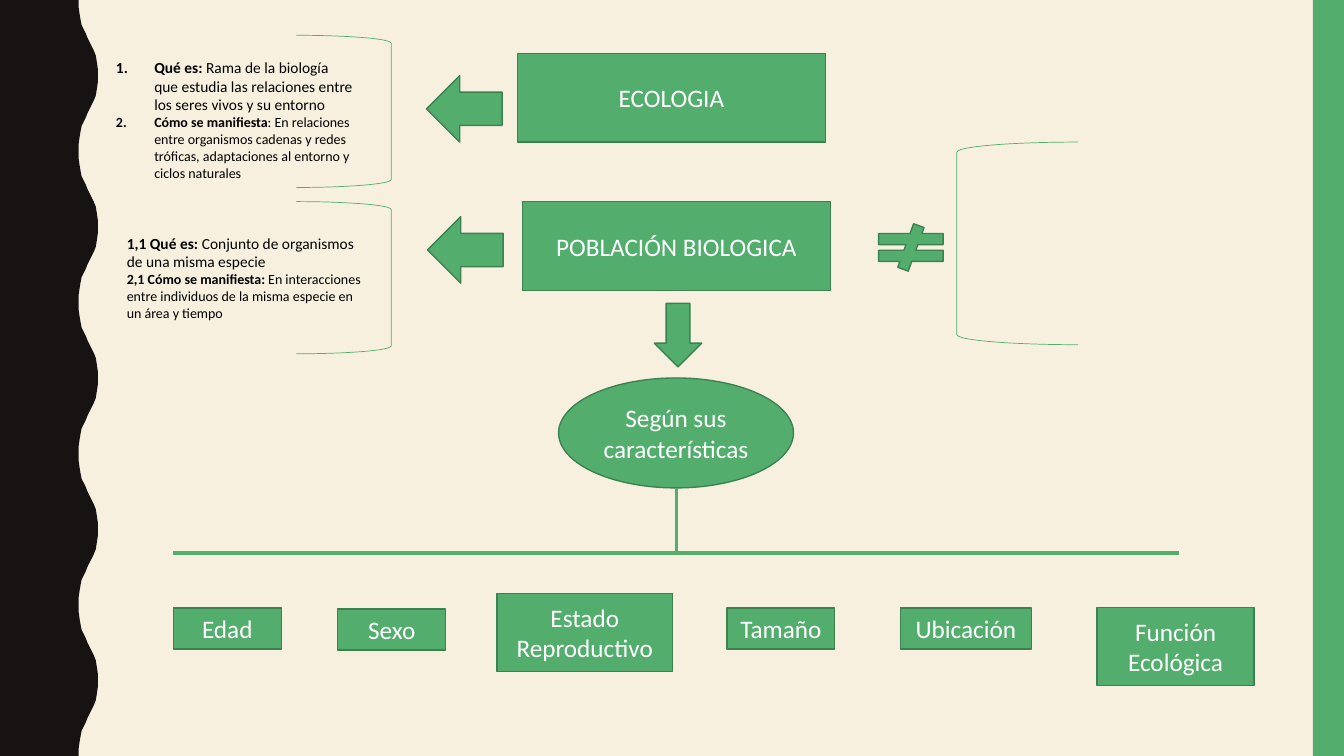
from lxml import etree
from pptx import Presentation
from pptx.dml.color import RGBColor
from pptx.enum.shapes import MSO_CONNECTOR, MSO_SHAPE
from pptx.enum.text import MSO_ANCHOR, MSO_AUTO_SIZE, PP_ALIGN
from pptx.oxml.ns import qn
from pptx.util import Pt

PX = 9144
RECT, OVAL = MSO_SHAPE.RECTANGLE, MSO_SHAPE.OVAL
LEFT, DOWN = MSO_SHAPE.LEFT_ARROW, MSO_SHAPE.DOWN_ARROW
UNLIKE = MSO_SHAPE.MATH_NOT_EQUAL
OPEN, CLOSE = MSO_SHAPE.LEFT_BRACKET, MSO_SHAPE.RIGHT_BRACKET
LINE = MSO_CONNECTOR.STRAIGHT
TOP, MIDDLE = MSO_ANCHOR.TOP, MSO_ANCHOR.MIDDLE
START, CENTER = PP_ALIGN.LEFT, PP_ALIGN.CENTER
FIXED = MSO_AUTO_SIZE.NONE
GREEN, EDGE, DARK, CREAM = "53AE6E", "3D8151", "171312", "F7F0DF"
WHITE, BLACK = "FFFFFF", "000000"
FONT = "Calibri"
ink = RGBColor.from_string


def paint(shape, fill, edge, width=1):
    shape.shadow.inherit = False
    if fill:
        shape.fill.solid()
        shape.fill.fore_color.rgb = ink(fill)
    else:
        shape.fill.background()
    if edge:
        shape.line.color.rgb = ink(edge)
        shape.line.width = Pt(width)
    else:
        shape.line.fill.background()


def write(shape, rows, tone, align, anchor):
    frame = shape.text_frame
    frame.word_wrap = True
    frame.auto_size = FIXED
    frame.vertical_anchor = anchor
    for i, (size, runs) in enumerate(rows):
        para = frame.add_paragraph() if i else frame.paragraphs[0]
        para.alignment = align
        para.space_before = Pt(0)
        for text, bold in runs:
            run = para.add_run()
            run.text = text
            run.font.name = FONT
            run.font.size = Pt(size)
            run.font.bold = bold
            run.font.color.rgb = ink(tone)


deck = Presentation()
deck.slide_width, deck.slide_height = 1333 * PX, 750 * PX
slide = deck.slides.add_slide(deck.slide_layouts[1])
slide.background.fill.solid()
slide.background.fill.fore_color.rgb = ink(CREAM)
shapes = slide.shapes
title, body = slide.placeholders

half = [(78, 0), (78, 7), (79, 14), (80, 20), (81, 25), (83, 29), (85, 33),
        (87, 38), (89, 42), (91, 46), (93, 50), (95, 55), (96, 61), (97, 68),
        (97, 75)]
wave = half + [(x, 150 - y) for x, y in half[-2::-1]]
edge = [(x, top + y) for top in range(0, 750, 150) for x, y in wave]
pen = shapes.build_freeform(0, 0, scale=PX)
pen.add_line_segments(edge + [(0, 750)], close=True)
paint(pen.convert_to_shape(), DARK, None)

band = shapes.add_shape(RECT, 1302 * PX, 0, 31 * PX, 750 * PX)
paint(band, GREEN, None)

title.left, title.top, title.width, title.height = [
    n * PX for n in (513, 53, 306, 88)]
paint(title, GREEN, EDGE)
write(title, [(18, [("ECOLOGIA", False)])], WHITE, CENTER, MIDDLE)

nodes = [
    (RECT, 518, 200, 306, 88, "POBLACIÓN BIOLOGICA"),
    (OVAL, 554, 375, 233, 109, "Según sus características"),
    (RECT, 172, 603, 107, 41, "Edad"),
    (RECT, 335, 604, 107, 41, "Sexo"),
    (RECT, 493, 589, 174, 77, "Estado Reproductivo"),
    (RECT, 721, 603, 107, 41, "Tamaño"),
    (RECT, 893, 603, 130, 41, "Ubicación"),
    (RECT, 1088, 603, 156, 77, "Función Ecológica"),
    (UNLIKE, 860, 222, 87, 47, ""),
    (LEFT, 423, 75, 75, 66, ""),
    (LEFT, 424, 215, 75, 66, ""),
    (DOWN, 649, 301, 47, 63, ""),
]
for kind, x, y, w, h, text in nodes:
    node = shapes.add_shape(kind, x * PX, y * PX, w * PX, h * PX)
    paint(node, GREEN, EDGE)
    if text:
        write(node, [(18, [(text, False)])], WHITE, CENTER, MIDDLE)

for kind, x, y, w, h in [(CLOSE, 294, 35, 94, 151), (CLOSE, 294, 200, 94, 151),
                         (OPEN, 949, 141, 120, 201)]:
    brace = shapes.add_shape(kind, x * PX, y * PX, w * PX, h * PX)
    paint(brace, None, GREEN, 0.5)

for x, y, right, low, width in [(172, 549, 1169, 549, 3),
                                (671, 484, 671, 549, 2.25)]:
    link = shapes.add_connector(LINE, x * PX, y * PX, right * PX, low * PX)
    link.line.color.rgb = ink(GREEN)
    link.line.width = Pt(width)
    etree.SubElement(link._element.spPr, qn("a:effectLst"))

body.left, body.top, body.width, body.height = [
    n * PX for n in (105, 53, 256, 150)]
write(body, [
    (11, [("Qué es: ", True),
          ("Rama de la biología que estudia las relaciones entre los seres "
           "vivos y su entorno", False)]),
    (10, [("Cómo se manifiesta", True),
          (": En relaciones entre organismos cadenas y redes tróficas, "
           "adaptaciones al entorno y ciclos naturales", False)]),
], BLACK, START, TOP)
for para in body.text_frame.paragraphs:
    props = para._p.get_or_add_pPr()
    props.set("marL", str(38 * PX))
    props.set("indent", str(-38 * PX))
    font = etree.SubElement(props, qn("a:buFont"))
    font.set("typeface", "+mj-lt")
    mark = etree.SubElement(props, qn("a:buAutoNum"))
    mark.set("type", "arabicPeriod")

note = shapes.add_textbox(116 * PX, 227 * PX, 256 * PX, 98 * PX)
write(note, [
    (11, [("1,1 Qué es: ", True),
          ("Conjunto de organismos de una misma especie", False)]),
    (10, [("2,1 Cómo se manifiesta: ", True),
          ("En interacciones entre individuos de la misma especie en un área "
           "y tiempo", False)]),
], BLACK, START, TOP)

deck.save("out.pptx")
